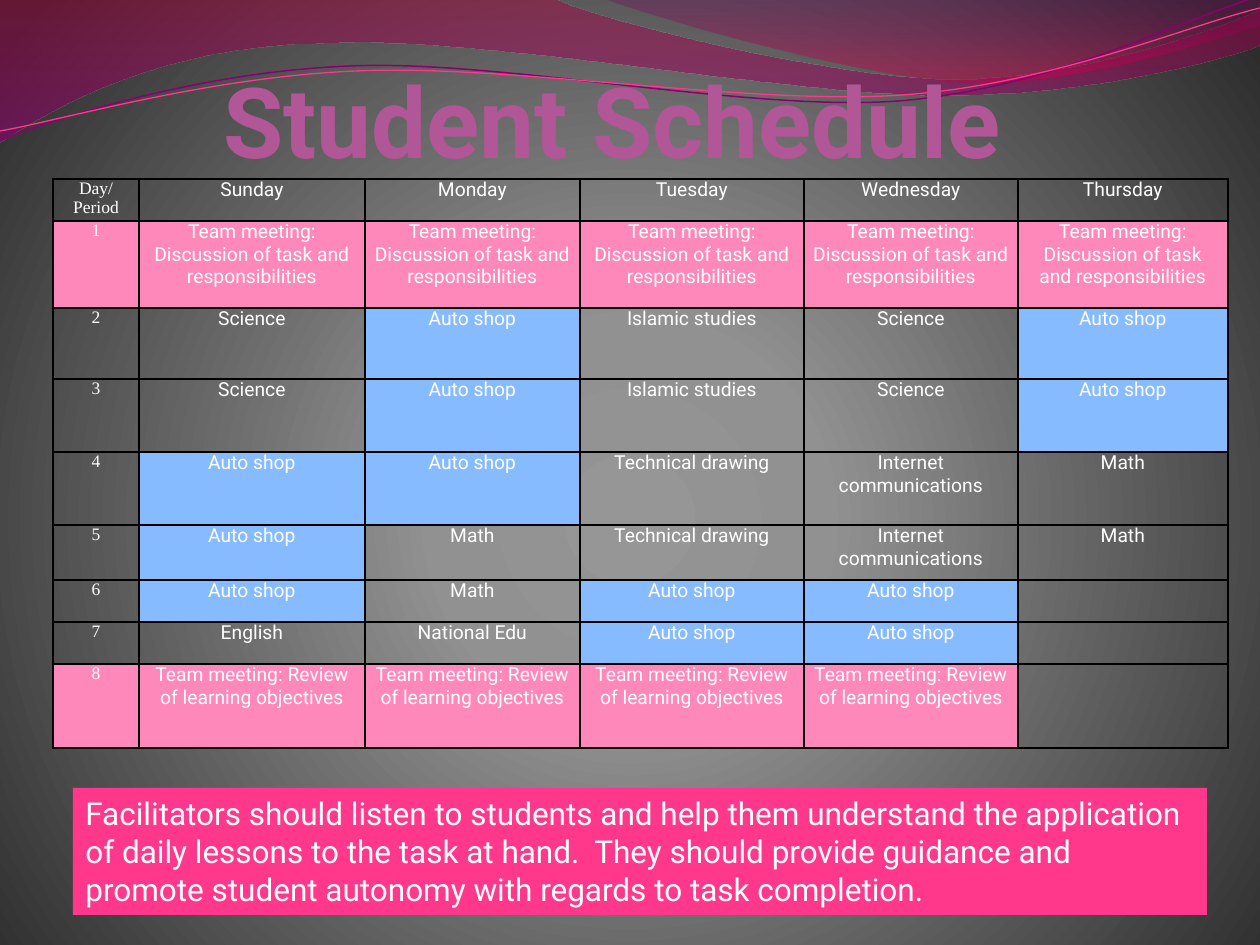
import dataclasses
import typing

import lxml.etree
import pptx
import pptx.dml.color
import pptx.enum.shapes
import pptx.enum.text
import pptx.oxml.ns
import pptx.util

EMU_PER_PX = 914400 / 126
SANS, SERIF = "Roboto", "Times New Roman"
WHITE, PINK, BLUE, HOT_PINK = "FFFFFF", "FF88BA", "87BBFF", "FF388C"
CENTER = pptx.enum.text.PP_ALIGN.CENTER
LEFT = pptx.enum.text.PP_ALIGN.LEFT

SHOP = "Auto shop"
TECHNICAL = "Technical drawing"
INTERNET = "Internet communications"
MEETING = "Team meeting: Discussion of task and responsibilities"
REVIEW = "Team meeting: Review of learning objectives"
FILLS = {SHOP: BLUE, MEETING: PINK, REVIEW: PINK}
COLUMN_WIDTHS = [86, 226, 215, 224, 214, 210]
ROW_HEIGHTS = [19, 87, 71, 73, 73, 55, 42, 42, 84]
DAYS = ["Sunday", "Monday", "Tuesday", "Wednesday", "Thursday"]
PERIODS = [
    [MEETING] * 5,
    ["Science", SHOP, "Islamic studies", "Science", SHOP],
    ["Science", SHOP, "Islamic studies", "Science", SHOP],
    [SHOP, SHOP, TECHNICAL, INTERNET, "Math"],
    [SHOP, "Math", TECHNICAL, INTERNET, "Math"],
    [SHOP, "Math", SHOP, SHOP, ""],
    ["English", "National Edu", SHOP, SHOP, ""],
    [REVIEW] * 4 + [""],
]
GUIDANCE = (
    "Facilitators should listen to students and help them understand the application "
    "of daily lessons to the task at hand.  They should provide guidance and promote "
    "student autonomy with regards to task completion."
)

Point = tuple[int, int]


class Stop(typing.NamedTuple):
    position: int
    color: str
    opacity: int = 100


@dataclasses.dataclass
class Ribbon:
    start: Point
    segments: list[list[Point]]
    stops: tuple[Stop, ...] = ()
    line_color: str = ""
    line_width: float = 0


RIBBONS = [
    Ribbon(
        (0, 0),
        [
            [(554, -1)],
            [(600, 21), (837, 79), (955, 79)],
            [(1075, 79), (1207, 33), (1260, 11)],
            [(1261, 45)],
            [(1239, 55), (1096, 96), (940, 95)],
            [(784, 95), (481, 35), (324, 43)],
            [(163, 45), (58, 105), (-1, 142)],
        ],
        stops=(Stop(0, "A90042", 45), Stop(100, "8E0073", 55)),
    ),
    Ribbon(
        (604, -1),
        [
            [(641, 14), (859, 78), (969, 82)],
            [(1079, 86), (1211, 40), (1260, 26)],
            [(1260, 0)],
        ],
        stops=(Stop(0, "73005E", 30), Stop(80, "C9004F", 45)),
    ),
    Ribbon(
        (0, 140),
        [
            [(60, 117), (199, 72), (349, 66)],
            [(498, 59), (747, 112), (898, 101)],
            [(1050, 89), (1182, 19), (1257, -3)],
        ],
        line_color="8A0070",
        line_width=0.85,
    ),
    Ribbon(
        (0, 131),
        [
            [(59, 121), (207, 77), (357, 71)],
            [(508, 64), (752, 106), (903, 95)],
            [(1053, 84), (1186, 26), (1260, 8)],
        ],
        line_color=HOT_PINK,
        line_width=0.75,
    ),
]


def px(length: float) -> int:
    return pptx.util.Emu(round(length * EMU_PER_PX))


def rgb(color: str):
    return pptx.dml.color.RGBColor.from_string(color)


def add_node(parent, tag: str, **attributes):
    return lxml.etree.SubElement(
        parent, pptx.oxml.ns.qn(tag), {name: str(value) for name, value in attributes.items()}
    )


def set_gradient(owner, fill, stops: typing.Iterable[Stop], radial: bool = False) -> None:
    fill.gradient()
    gradient = owner.find(".//" + pptx.oxml.ns.qn("a:gradFill"))
    for node in list(gradient):
        gradient.remove(node)
    stop_list = add_node(gradient, "a:gsLst")
    for stop in stops:
        node = add_node(stop_list, "a:gs", pos=stop.position * 1000)
        color = add_node(node, "a:srgbClr", val=stop.color)
        if stop.opacity < 100:
            add_node(color, "a:alpha", val=stop.opacity * 1000)
    if radial:
        focus = add_node(gradient, "a:path", path="circle")
        add_node(focus, "a:fillToRect", l=10000, t=110000, r=10000, b=100000)
    else:
        add_node(gradient, "a:lin", ang=5400000, scaled=0)


def write_text(frame, text: str, *, size: float, font: str = SANS, color: str = WHITE,
               bold: bool = False, align=CENTER) -> None:
    paragraph = frame.paragraphs[0]
    paragraph.alignment = align
    run = paragraph.add_run()
    run.text = text
    run.font.name, run.font.size, run.font.bold = font, pptx.util.Pt(size), bold
    run.font.color.rgb = rgb(color)


def draw_ribbon(slide, ribbon: Ribbon) -> None:
    builder = slide.shapes.build_freeform(*map(px, ribbon.start), scale=1.0)
    points = [(px(x), px(y)) for segment in ribbon.segments for x, y in segment]
    builder.add_line_segments(points, close=bool(ribbon.stops))
    shape = builder.convert_to_shape()
    shape.shadow.inherit = False
    nodes = iter(shape.element.findall(".//" + pptx.oxml.ns.qn("a:lnTo")))
    for segment in ribbon.segments:
        first, *others = [next(nodes) for _ in segment]
        if others:
            first.tag = pptx.oxml.ns.qn("a:cubicBezTo")
        for other in others:
            first.append(other[0])
            other.getparent().remove(other)
    if ribbon.stops:
        set_gradient(shape.element, shape.fill, ribbon.stops)
        shape.line.fill.background()
    else:
        shape.fill.background()
        shape.line.color.rgb = rgb(ribbon.line_color)
        shape.line.width = pptx.util.Pt(ribbon.line_width)


def format_cell(cell, text: str, font: str, size: float, fill: str) -> None:
    cell.margin_left = cell.margin_right = px(9)
    cell.margin_top = cell.margin_bottom = 0
    if text:
        write_text(cell.text_frame, text, size=size, font=font)
    properties = cell._tc.get_or_add_tcPr()
    for side in ("a:lnL", "a:lnR", "a:lnT", "a:lnB"):
        border = add_node(properties, side, w=12700)
        add_node(add_node(border, "a:solidFill"), "a:srgbClr", val="000000")
    if fill:
        cell.fill.solid()
        cell.fill.fore_color.rgb = rgb(fill)
    else:
        cell.fill.background()


def draw_schedule(slide) -> None:
    frame = slide.shapes.add_table(
        len(ROW_HEIGHTS), len(COLUMN_WIDTHS), px(53), px(179), px(sum(COLUMN_WIDTHS)), px(571)
    )
    schedule = frame.table
    schedule.first_row = schedule.horz_banding = False
    for column, width in zip(schedule.columns, COLUMN_WIDTHS):
        column.width = px(width)
    for row, height in zip(schedule.rows, ROW_HEIGHTS):
        row.height = px(height)
    frame.height = px(571)
    lines = [["Day/Period", *DAYS]]
    lines += [[str(number), *lessons] for number, lessons in enumerate(PERIODS, 1)]
    for row, line in zip(schedule.rows, lines):
        for index, (cell, text) in enumerate(zip(row.cells, line)):
            font, size = (SANS, 11) if index else (SERIF, 10)
            fill = FILLS.get(text, "") if index else (PINK if FILLS.get(line[1]) == PINK else "")
            format_cell(cell, text, font, size, fill)


def main() -> None:
    """Build the student schedule slide and save it."""
    deck = pptx.Presentation()
    deck.slide_width, deck.slide_height = px(1260), px(945)
    slide = deck.slides.add_slide(deck.slide_layouts[6])
    backdrop = (Stop(0, "969696"), Stop(25, "919191"), Stop(100, "2D2D2D"))
    set_gradient(slide.element, slide.background.fill, backdrop, radial=True)
    for ribbon in RIBBONS:
        draw_ribbon(slide, ribbon)

    title = slide.shapes.add_textbox(px(73), px(42), px(1082), px(136)).text_frame
    title.word_wrap = True
    title.vertical_anchor = pptx.enum.text.MSO_ANCHOR.BOTTOM
    title.margin_left = title.margin_top = title.margin_bottom = 0
    title.margin_right = px(3)
    write_text(title, "Student Schedule", size=56, color="B15696", bold=True)

    draw_schedule(slide)

    rectangle = pptx.enum.shapes.MSO_SHAPE.RECTANGLE
    guidance = slide.shapes.add_shape(rectangle, px(73), px(788), px(1134), px(127))
    guidance.shadow.inherit = False
    guidance.fill.solid()
    guidance.fill.fore_color.rgb = rgb(HOT_PINK)
    guidance.line.fill.background()
    guidance.text_frame.word_wrap = True
    guidance.text_frame.vertical_anchor = pptx.enum.text.MSO_ANCHOR.TOP
    write_text(guidance.text_frame, GUIDANCE, size=18, align=LEFT)
    deck.save("out.pptx")


if __name__ == "__main__":
    main()
